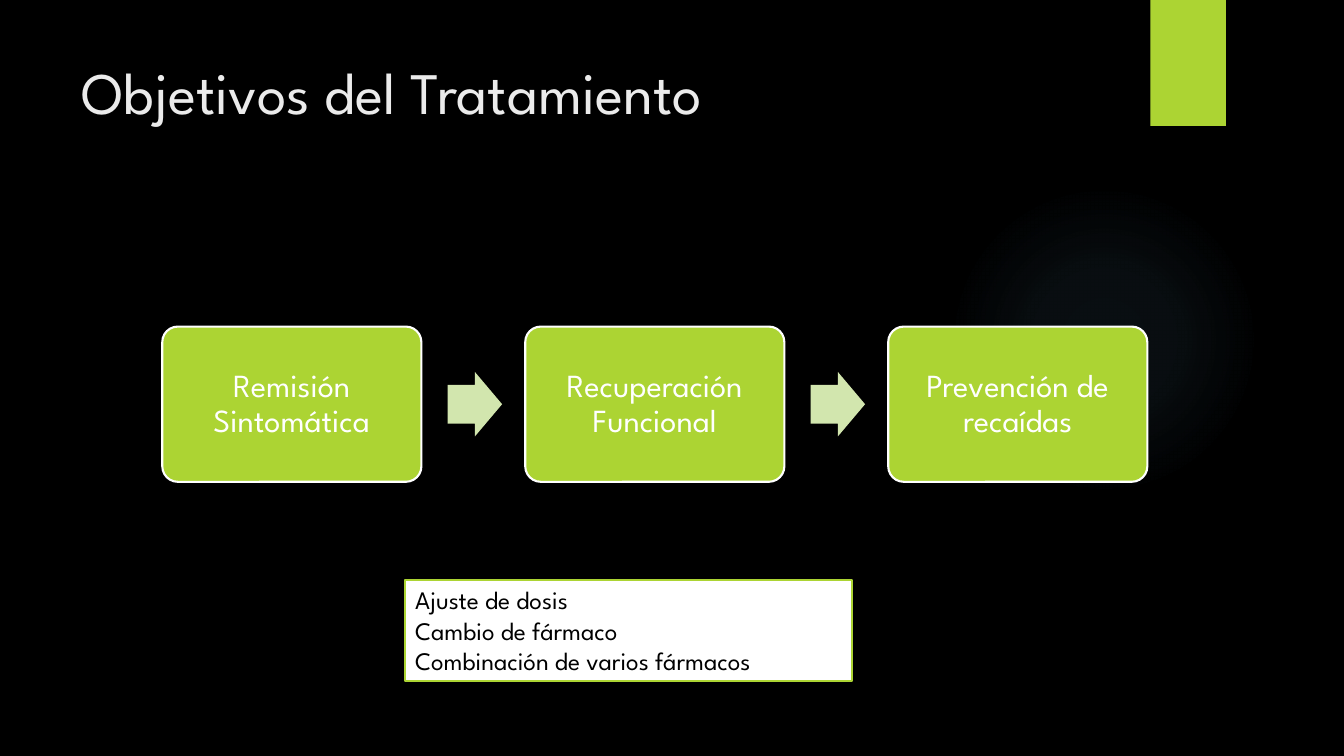
from lxml.etree import SubElement
from pptx import Presentation
from pptx.dml.color import RGBColor
from pptx.enum.shapes import MSO_SHAPE as Shape
from pptx.enum.text import MSO_ANCHOR as Anchor, PP_ALIGN as Align
from pptx.oxml import parse_xml
from pptx.oxml.ns import nsdecls, qn
from pptx.util import Inches, Pt

GOALS = ["Remisión Sintomática", "Recuperación Funcional", "Prevención de recaídas"]
ADJUSTMENTS = ["Ajuste de dosis", "Cambio de fármaco", "Combinación de varios fármacos"]
GOAL_LEFT, GOAL_STEP = 1.61, 3.6


def rgb(value):
    return RGBColor.from_string(value)


class TreatmentSlide:
    font = "League Spartan"
    black, white, title_gray = "000000", "FFFFFF", "EBEBEB"
    lime, pale_lime, glow_blue = "ACD433", "D2E6AE", "7AC4F0"

    def __init__(self, slide):
        self.slide = slide
        background = slide.background.fill
        background.solid()
        background.fore_color.rgb = rgb(self.black)

    def set_text(self, frame, *lines, size, color, align=Align.LEFT,
                 anchor=Anchor.TOP, spacing=None, inset=None):
        frame.word_wrap = True
        frame.vertical_anchor = anchor
        if inset is not None:
            frame.margin_left = frame.margin_right = Inches(inset)
            frame.margin_top = frame.margin_bottom = Inches(inset)
        for index, line in enumerate(lines):
            paragraph = frame.add_paragraph() if index else frame.paragraphs[0]
            paragraph.alignment = align
            if spacing:
                paragraph.line_spacing = spacing
            run = paragraph.add_run()
            run.text = line
            run.font.name = self.font
            run.font.size = Pt(size)
            run.font.color.rgb = rgb(color)

    def shape(self, kind, box, fill, line=None, adjustments=()):
        shape = self.slide.shapes.add_shape(kind, *map(Inches, box))
        shape.shadow.inherit = False
        shape.fill.solid()
        shape.fill.fore_color.rgb = rgb(fill)
        if line:
            shape.line.color.rgb = rgb(line)
            shape.line.width = Pt(1.5)
        else:
            shape.line.fill.background()
        for index, value in enumerate(adjustments):
            shape.adjustments[index] = value
        return shape

    def glow(self, box):
        """Add a circle that fades out from its centre."""
        properties = self.shape(Shape.OVAL, box, self.glow_blue)._element.spPr
        stops = "".join(
            f'<a:gs pos="{position * 1000}"><a:srgbClr val="{self.glow_blue}">'
            f'<a:alpha val="{opacity * 1000}"/></a:srgbClr></a:gs>'
            for position, opacity in [(0, 7), (36, 6), (69, 0), (100, 0)])
        gradient = parse_xml(
            f'<a:gradFill {nsdecls("a")} rotWithShape="1"><a:gsLst>{stops}</a:gsLst>'
            '<a:path path="circle"><a:fillToRect l="50000" t="50000" r="50000" b="50000"/>'
            '</a:path></a:gradFill>')
        properties.replace(properties.find(qn("a:solidFill")), gradient)

    def ribbon(self, box):
        effects = self.shape(Shape.RECTANGLE, box, self.lime)._element.spPr.find(qn("a:effectLst"))
        shadow = SubElement(effects, qn("a:outerShdw"), blurRad=str(Pt(3)), dist=str(Pt(2)),
                            dir="5400000", rotWithShape="0")
        color = SubElement(shadow, qn("a:srgbClr"), val=self.black)
        SubElement(color, qn("a:alpha"), val="45000")

    def title(self, text, box):
        frame = self.slide.shapes.add_textbox(*map(Inches, box)).text_frame
        self.set_text(frame, text, size=42, color=self.title_gray)

    def goal(self, text, left):
        card = self.shape(Shape.ROUNDED_RECTANGLE, (left, 3.24, 2.57, 1.54),
                          self.lime, self.white, [0.1])
        self.set_text(card.text_frame, text, size=23, color=self.white, align=Align.CENTER,
                      anchor=Anchor.MIDDLE, spacing=0.9, inset=0.1)

    def arrow(self, left):
        self.shape(Shape.RIGHT_ARROW, (left, 3.69, 0.54, 0.64),
                   self.pale_lime, adjustments=[0.6, 0.5])

    def note(self, lines, box):
        panel = self.shape(Shape.RECTANGLE, box, self.white, self.lime)
        self.set_text(panel.text_frame, *lines, size=18, color=self.black)


def main():
    deck = Presentation()
    deck.slide_width, deck.slide_height = Inches(13.33), Inches(7.5)
    page = TreatmentSlide(deck.slides.add_slide(deck.slide_layouts[6]))
    page.glow((9.41, 1.83, 3.08, 3.08))
    page.ribbon((11.41, 0, 0.75, 1.25))
    page.title("Objetivos del Tratamiento", (0.71, 0.5, 10.29, 1.53))
    for index, goal in enumerate(GOALS):
        left = GOAL_LEFT + index * GOAL_STEP
        if index:
            page.arrow(left - 0.77)
        page.goal(goal, left)
    page.note(ADJUSTMENTS, (4.02, 5.75, 4.43, 1.01))
    deck.save("out.pptx")


if __name__ == "__main__":
    main()
